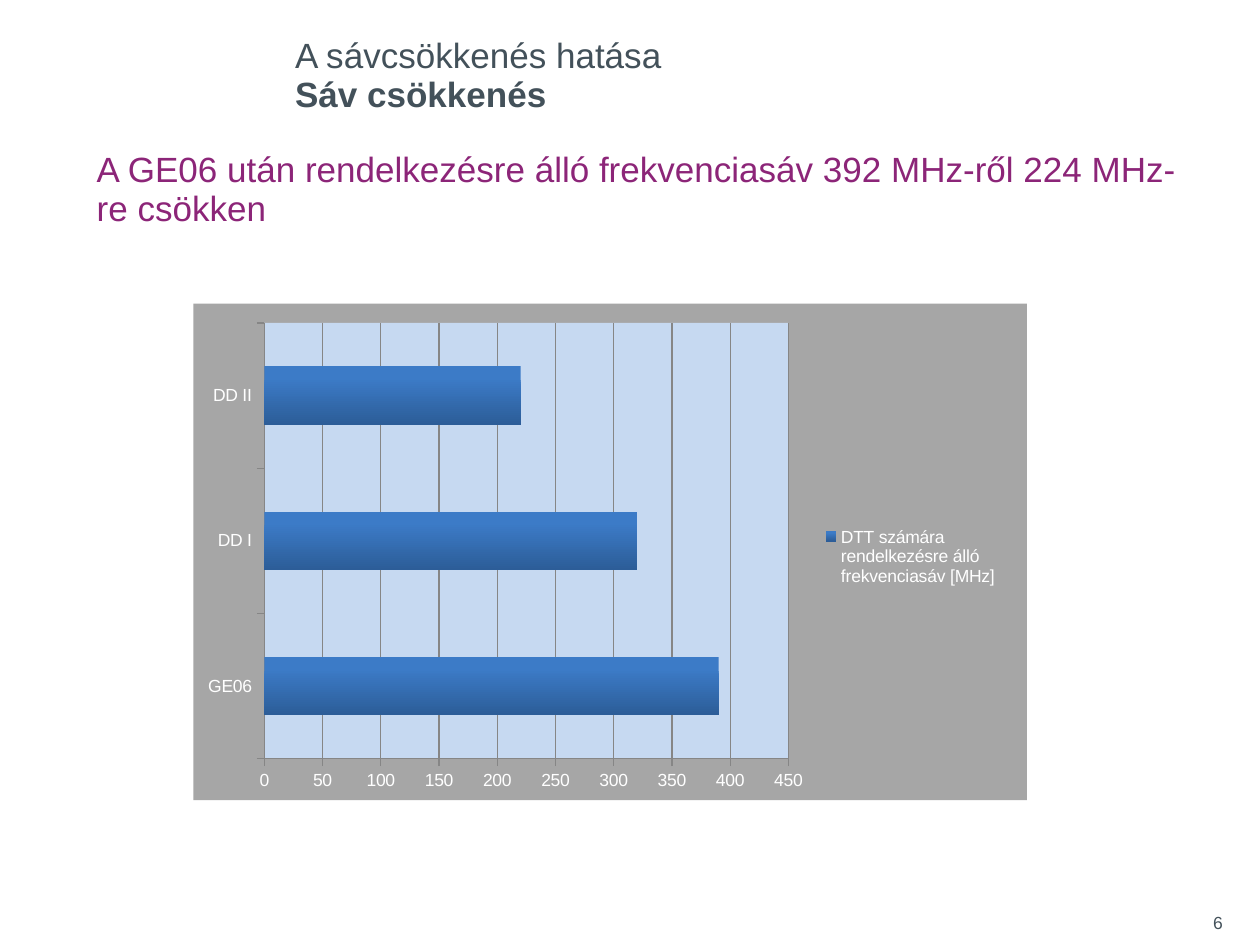
from dataclasses import dataclass

from lxml import etree
from pptx import Presentation
from pptx.chart.chart import Chart
from pptx.chart.data import CategoryChartData
from pptx.dml.color import RGBColor
from pptx.enum.chart import XL_CHART_TYPE, XL_LEGEND_POSITION, XL_TICK_MARK
from pptx.enum.text import MSO_ANCHOR, PP_ALIGN
from pptx.oxml import parse_xml
from pptx.oxml.ns import nsdecls, qn
from pptx.slide import Slide
from pptx.util import Cm, Pt

BAR_CLUSTERED = XL_CHART_TYPE.BAR_CLUSTERED
LEGEND_RIGHT = XL_LEGEND_POSITION.RIGHT
TICK_OUTSIDE = XL_TICK_MARK.OUTSIDE
TOP, BOTTOM = MSO_ANCHOR.TOP, MSO_ANCHOR.BOTTOM
LEFT, RIGHT = PP_ALIGN.LEFT, PP_ALIGN.RIGHT


@dataclass(frozen=True)
class Theme:
    font: str = "Arial"
    heading_size: int = 20
    small_size: int = 10
    heading_spacing: int = 22
    slate: str = "43515A"
    purple: str = "8C2578"
    chart_text: str = "FFFFFF"
    chart_fill: str = "A6A6A6"
    plot_fill: str = "C6D9F1"
    axis: str = "868686"
    bar_top: str = "3C7BC7"
    bar_bottom: str = "2C5D98"


@dataclass(frozen=True)
class TextBlock:
    text: str
    left: float
    top: float
    width: float
    height: float
    color: str
    size: int
    spacing: int | None = None
    bold: bool = False
    anchor: MSO_ANCHOR = TOP
    alignment: PP_ALIGN = LEFT
    vertical_inset: float = 0


@dataclass(frozen=True)
class ChartLayout:
    x: float
    y: float
    w: float
    h: float


THEME = Theme()

TEXT_BLOCKS = (
    TextBlock("6", 23.71, 18.26, 1.19, 1.02, THEME.slate, THEME.small_size,
              alignment=RIGHT, vertical_inset=0.13),
    TextBlock("A GE06 után rendelkezésre álló frekvenciasáv 392 MHz-ről 224 MHz-re csökken",
              1.7, 2.92, 22.83, 2.82, THEME.purple, THEME.heading_size,
              THEME.heading_spacing, vertical_inset=0.13),
    TextBlock("Sáv csökkenés", 5.7, 1.53, 18.03, 0.79, THEME.slate,
              THEME.heading_size, THEME.heading_spacing, bold=True),
    TextBlock("A sávcsökkenés hatása", 5.7, 0, 18.03, 1.53, THEME.slate,
              THEME.heading_size, THEME.heading_spacing, anchor=BOTTOM),
)

BANDWIDTHS = {"GE06": 390, "DD I": 320, "DD II": 220}
SERIES_NAME = "DTT számára rendelkezésre álló frekvenciasáv [MHz]"
PLOT_LAYOUT = ChartLayout(0.085, 0.039, 0.629, 0.878)
LEGEND_LAYOUT = ChartLayout(0.74, 0.44, 0.24, 0.14)


def add_text(slide: Slide, block: TextBlock) -> None:
    text_box = slide.shapes.add_textbox(
        Cm(block.left), Cm(block.top), Cm(block.width), Cm(block.height))
    text_frame = text_box.text_frame
    text_frame.text = block.text
    text_frame.word_wrap = True
    text_frame.vertical_anchor = block.anchor
    text_frame.margin_top = text_frame.margin_bottom = Cm(block.vertical_inset)
    paragraph = text_frame.paragraphs[0]
    paragraph.alignment = block.alignment
    if block.spacing:
        paragraph.line_spacing = Pt(block.spacing)
    font = paragraph.runs[0].font
    font.name = THEME.font
    font.size = Pt(block.size)
    font.bold = block.bold
    font.color.rgb = RGBColor.from_string(block.color)


def area_fill(color: str) -> etree.ElementBase:
    return parse_xml(
        f'<c:spPr {nsdecls("c", "a")}><a:solidFill><a:srgbClr val="{color}"/>'
        "</a:solidFill><a:ln><a:noFill/></a:ln></c:spPr>")


def set_layout(parent: etree.ElementBase, index: int, layout: ChartLayout,
               target: str = "") -> None:
    for old_layout in parent.findall(qn("c:layout")):
        parent.remove(old_layout)
    parent.insert(index, parse_xml(
        f'<c:layout {nsdecls("c")}><c:manualLayout>{target}'
        '<c:xMode val="edge"/><c:yMode val="edge"/>'
        f'<c:x val="{layout.x}"/><c:y val="{layout.y}"/>'
        f'<c:w val="{layout.w}"/><c:h val="{layout.h}"/>'
        "</c:manualLayout></c:layout>"))


def style_areas(chart: Chart) -> None:
    chart_element = chart.element.find(qn("c:chart"))
    chart_element.addnext(area_fill(THEME.chart_fill))
    plot_area = chart_element.find(qn("c:plotArea"))
    set_layout(plot_area, 0, PLOT_LAYOUT, '<c:layoutTarget val="inner"/>')
    plot_area.append(area_fill(THEME.plot_fill))
    set_layout(chart_element.find(qn("c:legend")), 1, LEGEND_LAYOUT)


def add_bandwidth_chart(slide: Slide) -> None:
    chart_data = CategoryChartData()
    chart_data.categories = list(BANDWIDTHS)
    chart_data.add_series(SERIES_NAME, list(BANDWIDTHS.values()))
    chart = slide.shapes.add_chart(
        BAR_CLUSTERED, Cm(3.9), Cm(6.12), Cm(16.8), Cm(10.01), chart_data).chart
    chart.has_title = False
    chart.font.name = THEME.font
    chart.font.size = Pt(THEME.small_size)
    chart.font.color.rgb = RGBColor.from_string(THEME.chart_text)
    chart.has_legend = True
    chart.legend.position = LEGEND_RIGHT
    chart.legend.include_in_layout = False

    value_axis = chart.value_axis
    value_axis.minimum_scale = 0
    value_axis.maximum_scale = 450
    value_axis.major_unit = 50
    value_axis.has_major_gridlines = True
    chart.category_axis.has_major_gridlines = False
    for axis in (chart.category_axis, value_axis):
        axis.major_tick_mark = TICK_OUTSIDE
    for lines in (chart.category_axis, value_axis, value_axis.major_gridlines):
        lines.format.line.color.rgb = RGBColor.from_string(THEME.axis)
        lines.format.line.width = Pt(0.75)

    plot = chart.plots[0]
    plot.gap_width = 150
    plot.vary_by_categories = False
    fill = plot.series[0].format.fill
    fill.gradient()
    fill.gradient_angle = 270
    stops = ((0.2, THEME.bar_top), (1, THEME.bar_bottom))
    for stop, (position, color) in zip(fill.gradient_stops, stops):
        stop.position = position
        stop.color.rgb = RGBColor.from_string(color)
    style_areas(chart)


def main() -> None:
    """Build the slide on shrinking broadcast bandwidth."""
    presentation = Presentation()
    presentation.slide_width = Cm(25.4)
    presentation.slide_height = Cm(19.05)
    slide = presentation.slides.add_slide(presentation.slide_layouts[6])
    for block in TEXT_BLOCKS:
        add_text(slide, block)
    add_bandwidth_chart(slide)
    presentation.save("out.pptx")


if __name__ == "__main__":
    main()
